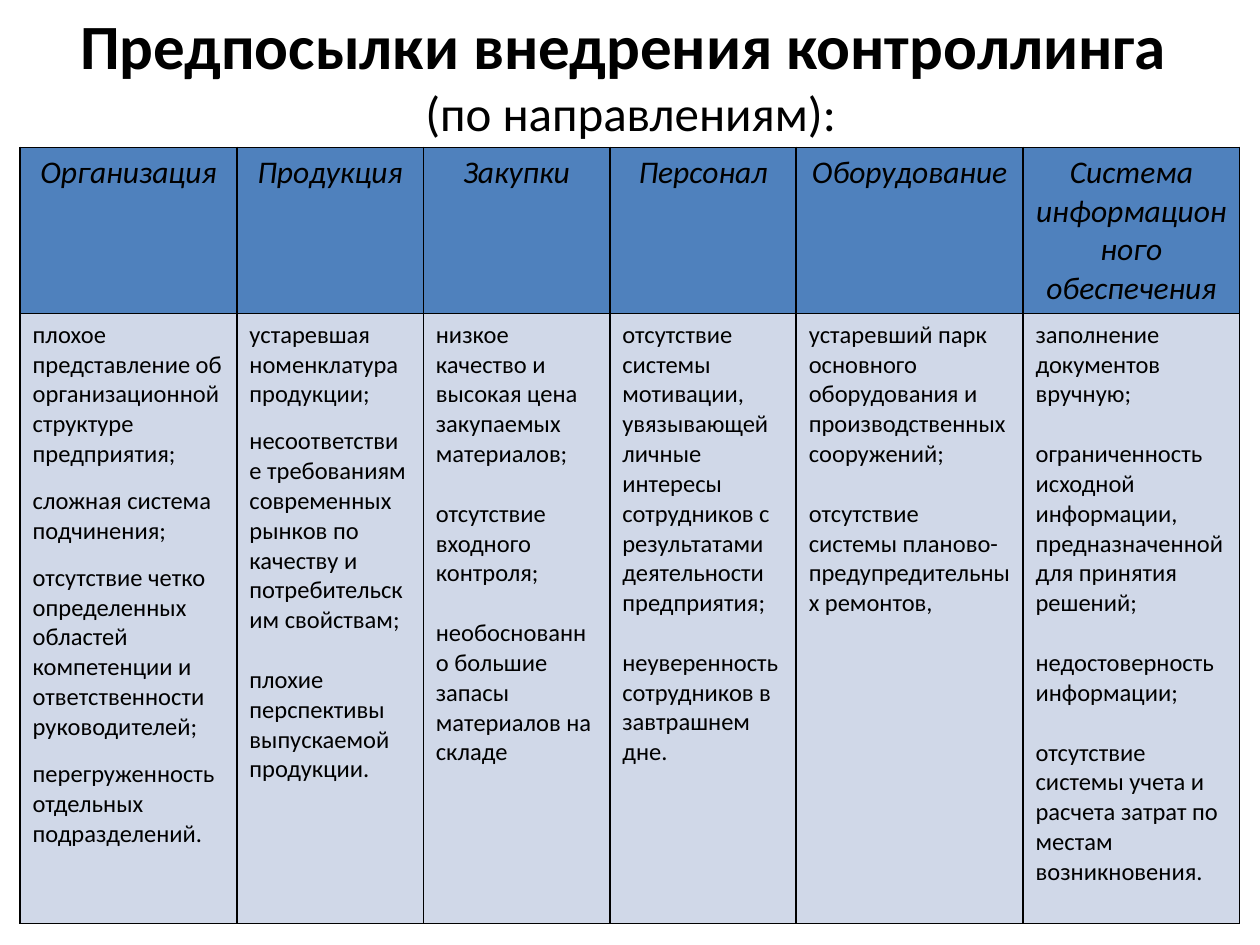
"""Build a slide with a table of prerequisites for introducing controlling."""
from lxml import etree
from pptx import Presentation
from pptx.dml.color import RGBColor
from pptx.enum.text import MSO_ANCHOR, PP_ALIGN
from pptx.oxml.ns import qn
from pptx.util import Inches, Pt

CENTER, LEFT, MIDDLE = PP_ALIGN.CENTER, PP_ALIGN.LEFT, MSO_ANCHOR.MIDDLE
COLORS = {"text": "000000", "border": "000000", "head": "4F81BD", "body": "D0D8E8"}
FONT = "Calibri"
FORMATS = {
    "title": {"size": Pt(36), "bold": True},
    "subtitle": {"size": Pt(28), "bold": False},
    "head": {"size": Pt(18), "bold": False, "italic": True},
    "body": {"size": Pt(14), "bold": False, "italic": False},
}
SMALL, FULL = 9.8, 17.1

TITLE = "Предпосылки внедрения контроллинга "
SUBTITLE = "(по направлениям):"
COLUMNS = [
    ("Организация", 1.72, [
        (0, "плохое представление об организационной структуре предприятия;"),
        (SMALL, "сложная система подчинения;"),
        (SMALL, "отсутствие четко определенных областей компетенции и ответственности руководителей;"),
        (SMALL, "перегруженность отдельных подразделений."),
    ]),
    ("Продукция", 1.48, [
        (0, "устаревшая номенклатура продукции;"),
        (SMALL, "несоответствие требованиям современных рынков по качеству и потребительским свойствам;"),
        (FULL, "плохие перспективы выпускаемой продукции."),
    ]),
    ("Закупки", 1.48, [
        (0, "низкое качество и высокая цена закупаемых материалов;"),
        (FULL, "отсутствие входного контроля;"),
        (FULL, "необоснованно большие запасы материалов на складе"),
    ]),
    ("Персонал", 1.48, [
        (0, "отсутствие системы мотивации, увязывающей личные интересы сотрудников "
            "с результатами деятельности предприятия;"),
        (FULL, "неуверенность сотрудников в завтрашнем дне."),
    ]),
    ("Оборудование", 1.8, [
        (0, "устаревший парк основного оборудования и производственных сооружений;"),
        (FULL, "отсутствие системы планово-предупредительных ремонтов,"),
    ]),
    ("Система информационного обеспечения", 1.72, [
        (0, "заполнение документов вручную;"),
        (FULL, "ограниченность исходной информации, предназначенной для принятия решений;"),
        (FULL, "недостоверность информации;"),
        (FULL, "отсутствие системы учета и расчета затрат по местам возникновения."),
    ]),
]
X, WIDTH, TABLE_TOP = 0.16, 9.69, 1.17
ROW_HEIGHTS = (1.32, 4.84)


def add_run(p, text, style):
    r = p.add_run()
    r.text = text
    r.font.name = FONT
    r.font.color.rgb = RGBColor.from_string(COLORS["text"])
    for name, value in FORMATS[style].items():
        setattr(r.font, name, value)


def add_borders(cell):
    tc_pr = cell._tc.get_or_add_tcPr()
    for i, side in enumerate(("a:lnL", "a:lnR", "a:lnT", "a:lnB")):
        ln = etree.Element(qn(side), w=str(Pt(1)))
        fill = etree.SubElement(ln, qn("a:solidFill"))
        etree.SubElement(fill, qn("a:srgbClr"), val=COLORS["border"])
        tc_pr.insert(i, ln)


def fill_cell(cell, items, style, align):
    cell.fill.solid()
    cell.fill.fore_color.rgb = RGBColor.from_string(COLORS[style])
    add_borders(cell)
    tf = cell.text_frame
    for i, (gap, text) in enumerate(items):
        p = tf.add_paragraph() if i else tf.paragraphs[0]
        p.alignment = align
        p.space_before = Pt(gap)
        add_run(p, text, style)


def add_title(s):
    box = s.shapes.add_textbox(Inches(X), 0, Inches(WIDTH), Inches(TABLE_TOP))
    tf = box.text_frame
    tf.word_wrap = True
    tf.vertical_anchor = MIDDLE
    p = tf.paragraphs[0]
    p.alignment = CENTER
    add_run(p, TITLE, "title")
    p.add_line_break()
    add_run(p, SUBTITLE, "subtitle")


def add_prerequisites(s):
    table = s.shapes.add_table(len(ROW_HEIGHTS), len(COLUMNS), Inches(X), Inches(TABLE_TOP),
                               Inches(WIDTH), Inches(sum(ROW_HEIGHTS))).table
    for row, height in zip(table.rows, ROW_HEIGHTS):
        row.height = Inches(height)
    for c, (heading, width, items) in enumerate(COLUMNS):
        table.columns[c].width = Inches(width)
        fill_cell(table.cell(0, c), [(0, heading)], "head", CENTER)
        fill_cell(table.cell(1, c), items, "body", LEFT)


def main():
    prs = Presentation()
    prs.slide_width, prs.slide_height = Inches(10), Inches(7.5)
    s = prs.slides.add_slide(prs.slide_layouts[6])
    add_title(s)
    add_prerequisites(s)
    prs.save("out.pptx")


if __name__ == "__main__":
    main()
